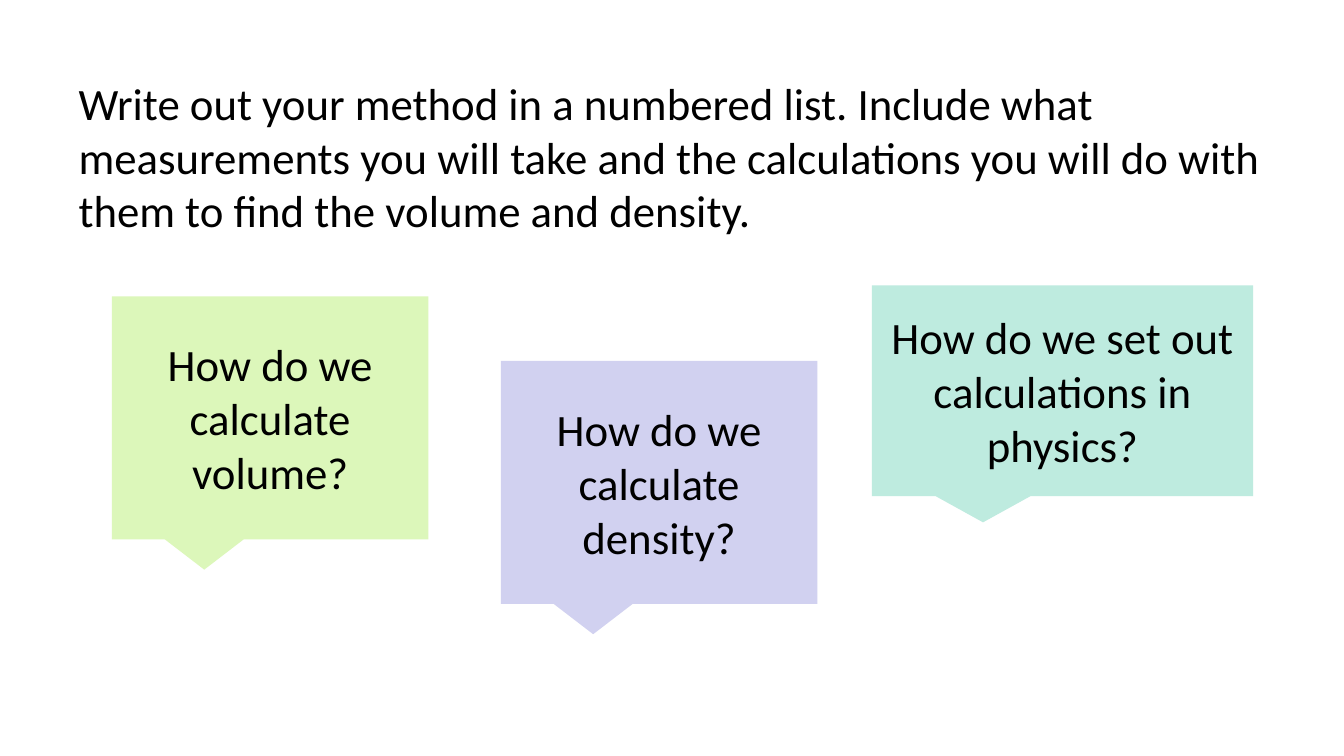
from pptx import Presentation
from pptx import util as u
from pptx.dml.color import RGBColor
from pptx.enum import shapes, text

BLACK = RGBColor(0x00, 0x00, 0x00)
GREEN = RGBColor(0xDC, 0xF7, 0xBA)
LILAC = RGBColor(0xD1, 0xD1, 0xF0)
MINT = RGBColor(0xBE, 0xEB, 0xDF)

BLANK_LAYOUT = 6

# Prompt, fill, and box as left, top, width, height in points
QUESTIONS = [
    ("How do we calculate volume?", GREEN, (80, 211.7, 226, 173.5)),
    ("How do we calculate density?", LILAC, (357.8, 257.8, 226, 173.5)),
    ("How do we set out calculations in physics?", MINT, (622.8, 203.8, 272.2, 150.5)),
]
TASK = ("Write out your method in a numbered list. Include what measurements "
        "you will take and the calculations you will do with them to find "
        "the volume and density.")


def write(frame, wording, align):
    """Put one paragraph of slide text in a frame."""
    frame.word_wrap = True
    para = frame.paragraphs[0]
    para.alignment = align
    span = para.add_run()
    span.text = wording
    span.font.name = "Calibri"
    span.font.size = u.Pt(32)
    span.font.color.rgb = BLACK


def add_task(page, box):
    """Task instructions across the top."""
    task = page.shapes.add_textbox(*map(u.Pt, box))
    write(task.text_frame, TASK, text.PP_ALIGN.LEFT)
    task.text_frame.auto_size = text.MSO_AUTO_SIZE.SHAPE_TO_FIT_TEXT


def add_question(page, wording, fill, box):
    """Speech bubble holding one guiding question."""
    bubble = page.shapes.add_shape(
        shapes.MSO_SHAPE.RECTANGULAR_CALLOUT, *map(u.Pt, box))
    bubble.shadow.inherit = False
    bubble.fill.solid()
    bubble.fill.fore_color.rgb = fill
    bubble.line.fill.background()
    bubble.text_frame.vertical_anchor = text.MSO_ANCHOR.MIDDLE
    write(bubble.text_frame, wording, text.PP_ALIGN.CENTER)


def main():
    deck = Presentation()
    deck.slide_width, deck.slide_height = u.Pt(960), u.Pt(540)
    page = deck.slides.add_slide(deck.slide_layouts[BLANK_LAYOUT])

    # Guiding questions
    for wording, fill, box in QUESTIONS:
        add_question(page, wording, fill, box)

    # Instructions
    add_task(page, (49, 50.4, 872.6, 123.8))

    deck.save("out.pptx")


if __name__ == "__main__":
    main()
